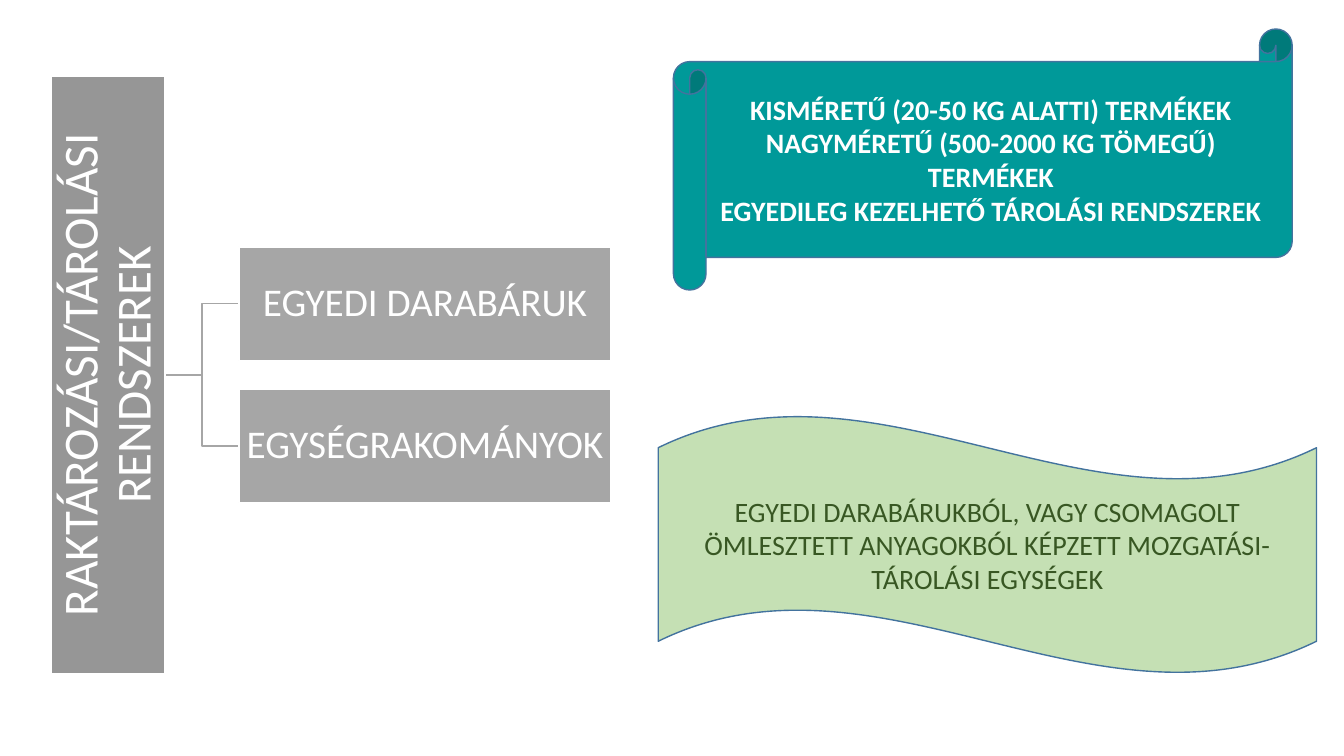
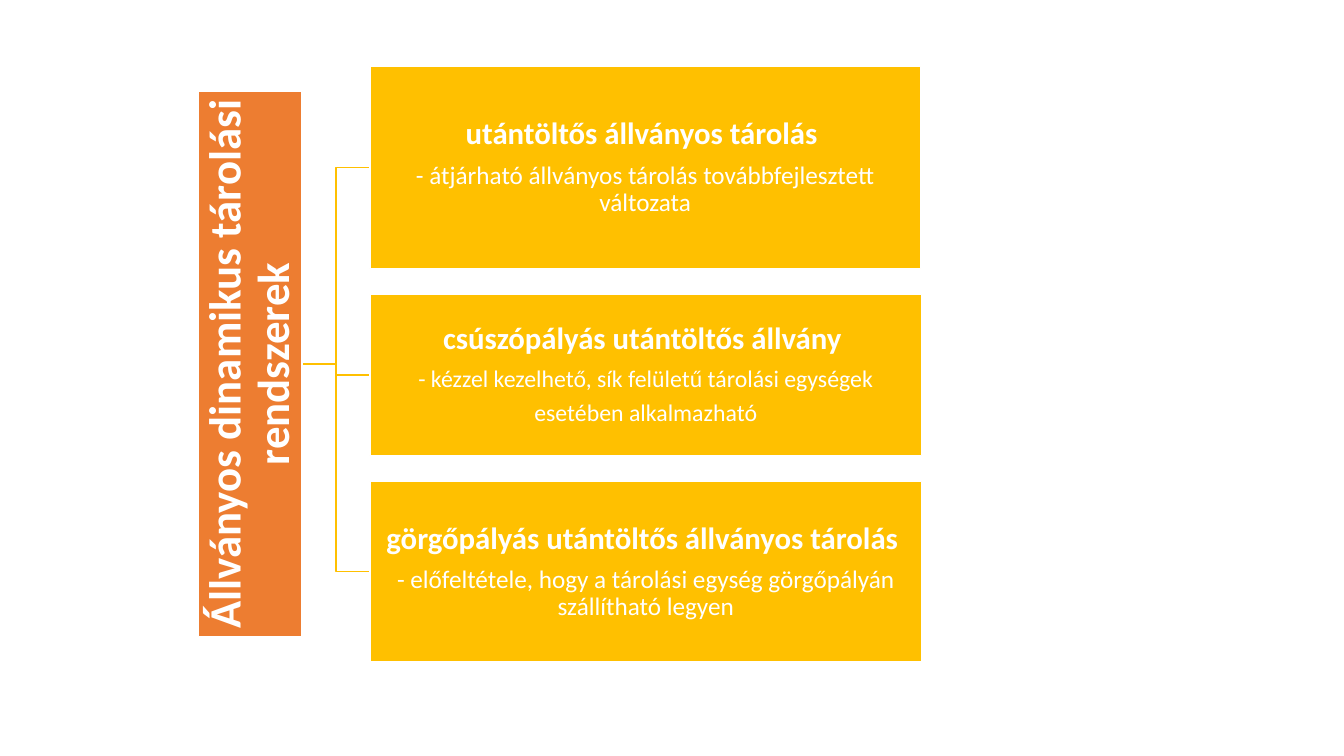
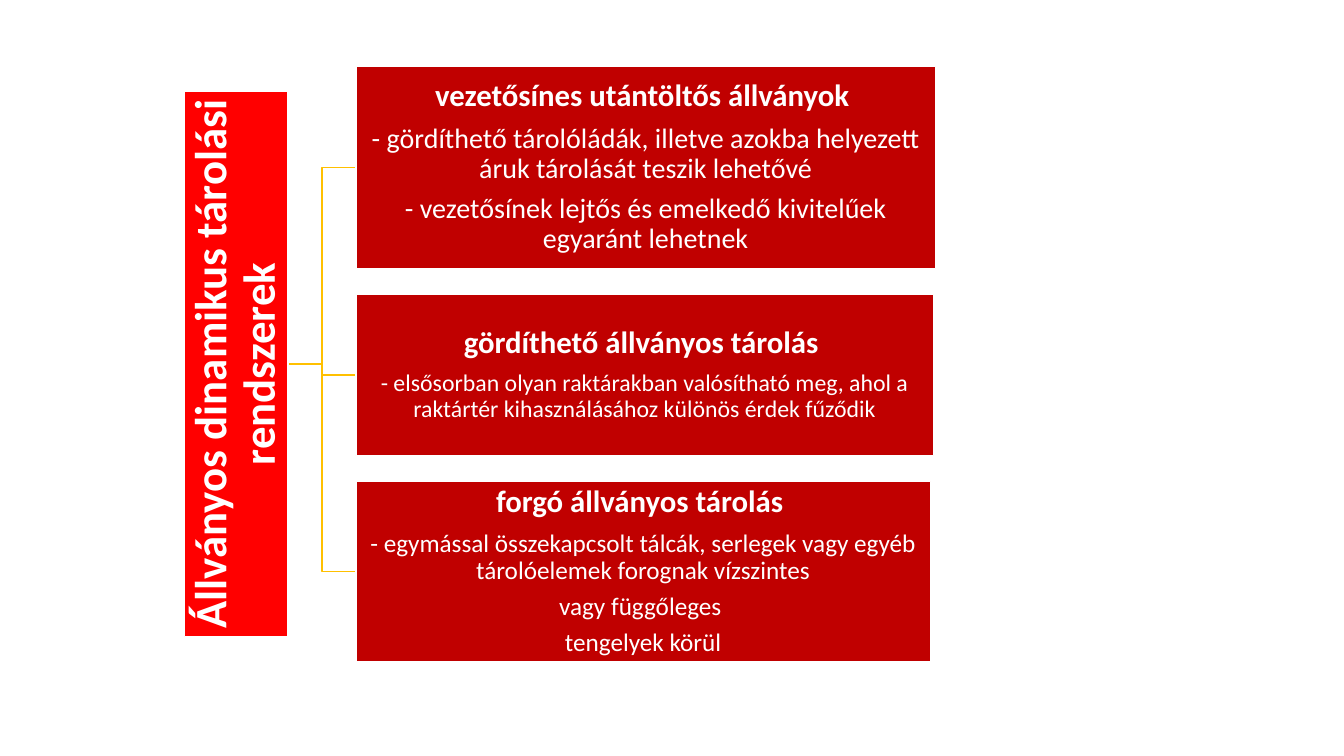
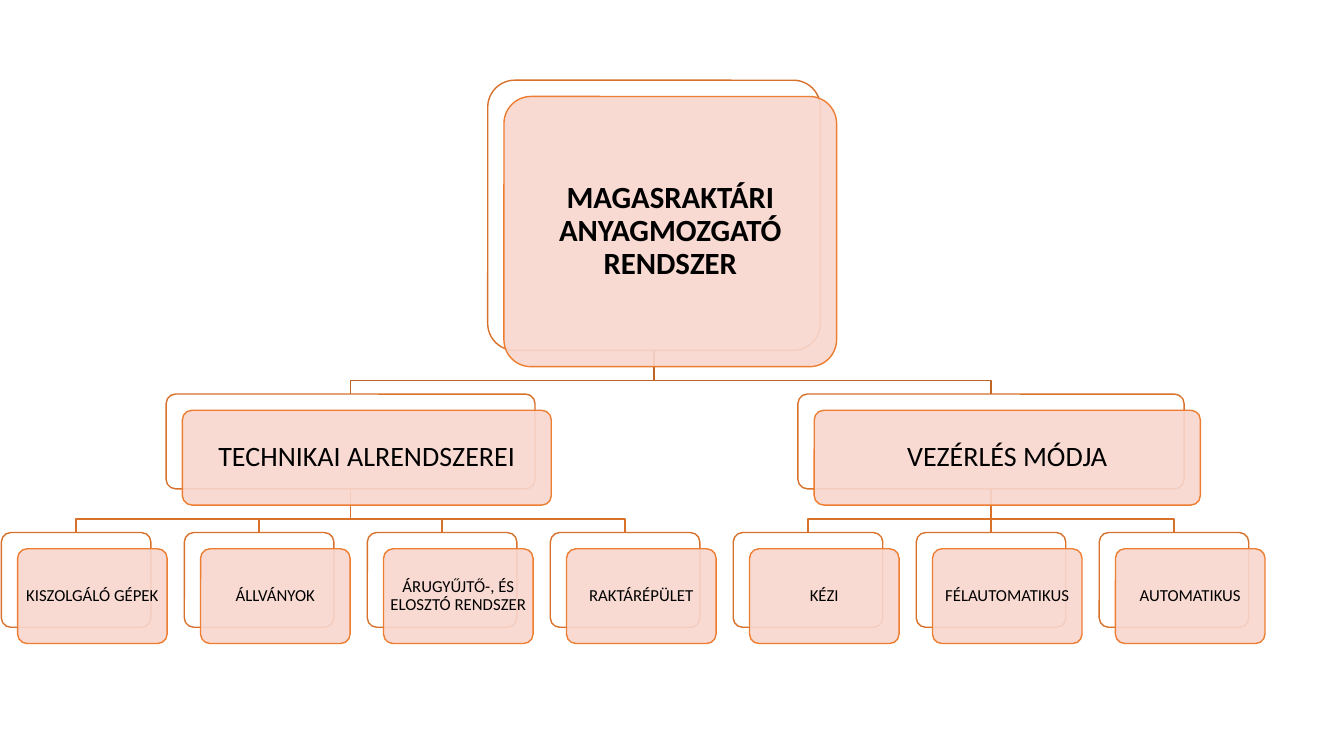
"""Build four slides of tree diagrams about warehouse storage systems."""
from lxml import etree
from pptx import Presentation
from pptx.dml.color import RGBColor
from pptx.enum.shapes import MSO_SHAPE
from pptx.enum.text import MSO_ANCHOR, MSO_AUTO_SIZE, PP_ALIGN
from pptx.oxml.ns import qn
from pptx.util import Pt

FONT = "Calibri"
TITLE_ONLY = 5
COLORS = {
    "white": "FFFFFF", "black": "000000", "gray": "A6A6A6", "dark gray": "969696",
    "orange": "ED7D31", "gold": "FFC000", "red": "FF0000", "dark red": "C00000",
    "teal": "009999", "light green": "C5E0B4", "dark green": "385723", "blue": "43739E",
    "peach": "F8D7CE", "rust": "D7712C", "dark rust": "BE6427",
}

RACK_TITLE = ("Állványos dinamikus tárolási rendszerek", 32, True)
BRACKETS = [
    {
        "title": ("RAKTÁROZÁSI/TÁROLÁSI RENDSZEREK", 35, False),
        "bar": (36.8, 54.2, 81, 427.2), "bar fill": "dark gray",
        "fill": "gray", "line": "gray",
        "left": 170.6, "top": 176.4, "gap": 20.3,
        "boxes": [
            (265.8, 81.2, [("EGYEDI DARABÁRUK", 28, False)]),
            (265.8, 81.2, [("EGYSÉGRAKOMÁNYOK", 28, False)]),
        ],
    },
    {
        "title": RACK_TITLE,
        "bar": (141.8, 65.2, 74, 389.5), "bar fill": "orange",
        "fill": "gold", "line": "gold",
        "left": 264.2, "top": 47.4, "gap": 18.4,
        "boxes": [
            (393.2, 144.6, [
                ("utántöltős állványos tárolás ", 22, True),
                ("- átjárható állványos tárolás továbbfejlesztett változata", 18, False)]),
            (394.2, 115, [
                ("csúszópályás utántöltős állvány ", 22, True),
                ("- kézzel kezelhető, sík felületű tárolási egységek", 17, False),
                ("esetében alkalmazható", 17, False)]),
            (394.2, 129, [
                ("görgőpályás utántöltős állványos tárolás ", 22, True),
                ("- előfeltétele, hogy a tárolási egység görgőpályán szállítható legyen",
                 18, False)]),
        ],
    },
    {
        "title": RACK_TITLE,
        "bar": (131.7, 65.2, 74, 389.5), "bar fill": "red",
        "fill": "dark red", "line": "gold",
        "left": 254.2, "top": 47.4, "gap": 18.4,
        "boxes": [
            (414, 144.6, [
                ("vezetősínes utántöltős állványok ", 22, True),
                ("- gördíthető tárolóládák, illetve azokba helyezett áruk tárolását "
                 "teszik lehetővé", 20, False),
                ("- vezetősínek lejtős és emelkedő kivitelűek egyaránt lehetnek", 20, False)]),
            (412.6, 115, [
                ("gördíthető állványos tárolás ", 22, True),
                ("- elsősorban olyan raktárakban valósítható meg, ahol a raktártér "
                 "kihasználásához különös érdek fűződik", 17, False)]),
            (410.4, 129, [
                ("forgó állványos tárolás ", 22, True),
                ("- egymással összekapcsolt tálcák, serlegek vagy egyéb tárolóelemek "
                 "forognak vízszintes", 18, False),
                ("vagy függőleges ", 18, False),
                ("tengelyek körül", 18, False)]),
        ],
    },
]

BANNERS = [
    (MSO_SHAPE.HORIZONTAL_SCROLL, (481, 20.7, 442, 186.5), "teal", "white", [
        ("KISMÉRETŰ (20-50 KG ALATTI) TERMÉKEK", 20, True),
        ("NAGYMÉRETŰ (500-2000 KG TÖMEGŰ) TERMÉKEK", 20, True),
        ("EGYEDILEG KEZELHETŐ TÁROLÁSI RENDSZEREK", 20, True)]),
    (MSO_SHAPE.WAVE, (470.2, 296.8, 470.2, 184.3), "light green", "dark green", [
        ("EGYEDI DARABÁRUKBÓL, VAGY CSOMAGOLT ÖMLESZTETT ANYAGOKBÓL KÉPZETT "
         "MOZGATÁSI-TÁROLÁSI EGYSÉGEK", 20, False)]),
]

ROOT = ("MAGASRAKTÁRI ANYAGMOZGATÓ RENDSZER", 22, True)
ROOT_BOX = (348.4, 57.3, 237.6, 193)
BRANCHES = [
    ("TECHNIKAI ALRENDSZEREI", 263.5,
     ["KISZOLGÁLÓ GÉPEK", "ÁLLVÁNYOK", "ÁRUGYŰJTŐ-, ÉS ELOSZTÓ RENDSZER", "RAKTÁRÉPÜLET"]),
    ("VEZÉRLÉS MÓDJA", 275.8, ["KÉZI", "FÉLAUTOMATIKUS", "AUTOMATIKUS"]),
]
BRANCH_TOP, LEAF_TOP, CARD_HEIGHT = 281.5, 380.4, 67.7
LEAF_LEFT, LEAF_WIDTH, LEAF_PITCH = 1, 106.8, 130.7
CARD_SHIFT = 11.6
BUS_RISE = 9.7


def color(name):
    return RGBColor.from_string(COLORS[name])


def outline(shape, line):
    shape.line.color.rgb = color(line)
    shape.line.width = Pt(1)


def paint(shape, fill, line):
    shape.fill.solid()
    shape.fill.fore_color.rgb = color(fill)
    outline(shape, line)


def place(shape, box):
    shape.left, shape.top, shape.width, shape.height = map(Pt, box)


def write(shape, lines, text_color, inset=None, line_spacing=0.9, space_ratio=0.35):
    frame = shape.text_frame
    frame.auto_size = MSO_AUTO_SIZE.NONE
    frame.word_wrap = True
    frame.vertical_anchor = MSO_ANCHOR.MIDDLE
    if inset is not None:
        frame.margin_left = frame.margin_right = Pt(inset)
        frame.margin_top = frame.margin_bottom = Pt(inset)
    for index, (text, size, bold) in enumerate(lines):
        paragraph = frame.add_paragraph() if index else frame.paragraphs[0]
        paragraph.text = text
        paragraph.alignment = PP_ALIGN.CENTER
        paragraph.line_spacing = line_spacing
        paragraph.space_after = Pt(round(size * space_ratio, 2))
        paragraph.font.name = FONT
        paragraph.font.size = Pt(size)
        paragraph.font.bold = bold
        paragraph.font.color.rgb = color(text_color)


def add_shape(slide, kind, box, fill, line):
    shape = slide.shapes.add_shape(kind, *map(Pt, box))
    shape.shadow.inherit = False
    paint(shape, fill, line)
    return shape


def add_elbow(slide, points, line):
    start, *others = [(Pt(x), Pt(y)) for x, y in points]
    builder = slide.shapes.build_freeform(*start)
    builder.add_line_segments(others, close=False)
    elbow = builder.convert_to_shape()
    elbow.shadow.inherit = False
    elbow.fill.background()
    outline(elbow, line)


def add_bracket(slide, bracket):
    left, top, width, height = bracket["bar"]
    center_x, center_y = left + width / 2, top + height / 2
    bar_right, box_left = left + width, bracket["left"]
    spine_x = (bar_right + box_left) / 2

    box_top = bracket["top"]
    for box_width, box_height, lines in bracket["boxes"]:
        middle = box_top + box_height / 2
        add_elbow(slide, [(bar_right, center_y), (spine_x, center_y),
                          (spine_x, middle), (box_left, middle)], bracket["line"])
        box = add_shape(slide, MSO_SHAPE.RECTANGLE,
                        (box_left, box_top, box_width, box_height),
                        bracket["fill"], "white")
        write(box, lines, "white", inset=1.4)
        box_top += box_height + bracket["gap"]

    title = slide.shapes.title
    place(title, (center_x - height / 2, center_y - width / 2, height, width))
    title.rotation = 270
    paint(title, bracket["bar fill"], "white")
    write(title, [bracket["title"]], "white", inset=1.4)
    title.element.getparent().append(title.element)


def add_bus(slide, parent_x, parent_bottom, child_xs, child_top, line):
    bus_y = child_top - BUS_RISE
    for child_x in child_xs:
        add_elbow(slide, [(parent_x, parent_bottom), (parent_x, bus_y),
                          (child_x, bus_y), (child_x, child_top)], line)


def add_card(slide, box):
    left, top, width, height = box
    front_box = (left + CARD_SHIFT, top + CARD_SHIFT, width, height)
    back = add_shape(slide, MSO_SHAPE.ROUNDED_RECTANGLE, box, "white", "rust")
    front = add_shape(slide, MSO_SHAPE.ROUNDED_RECTANGLE, front_box, "peach", "orange")
    for card in (back, front):
        card.adjustments[0] = 0.1
    fill_color = front._element.spPr.find(qn("a:solidFill"))[0]
    etree.SubElement(fill_color, qn("a:alpha"), val="90000")
    return front


def add_hierarchy(slide):
    cards = []
    branch_xs = []
    leaf_left = LEAF_LEFT
    for name, width, leaves in BRANCHES:
        leaf_xs = []
        for leaf in leaves:
            cards.append(((leaf_left, LEAF_TOP, LEAF_WIDTH, CARD_HEIGHT), leaf, 12, 1.6))
            leaf_xs.append(leaf_left + LEAF_WIDTH / 2)
            leaf_left += LEAF_PITCH
        branch_x = (leaf_xs[0] + leaf_xs[-1]) / 2
        branch_xs.append(branch_x)
        cards.append(((branch_x - width / 2, BRANCH_TOP, width, CARD_HEIGHT), name, 20, 4))
        add_bus(slide, branch_x, BRANCH_TOP + CARD_HEIGHT, leaf_xs, LEAF_TOP, "rust")

    left, top, width, height = ROOT_BOX
    add_bus(slide, left + width / 2, top + height, branch_xs, BRANCH_TOP, "dark rust")
    for box, text, size, inset in cards:
        write(add_card(slide, box), [(text, size, False)], "black", inset)

    add_card(slide, ROOT_BOX)
    title = slide.shapes.title
    place(title, (left + CARD_SHIFT, top + CARD_SHIFT, width, height))
    write(title, [ROOT], "black", inset=6.5)
    title.element.getparent().append(title.element)


def main():
    presentation = Presentation()
    presentation.slide_width, presentation.slide_height = Pt(960), Pt(540)
    layout = presentation.slide_layouts[TITLE_ONLY]

    for bracket in BRACKETS:
        add_bracket(presentation.slides.add_slide(layout), bracket)
    for kind, box, fill, text_color, lines in BANNERS:
        banner = add_shape(presentation.slides[0], kind, box, fill, "blue")
        write(banner, lines, text_color, line_spacing=1.0, space_ratio=0)
    add_hierarchy(presentation.slides.add_slide(layout))

    presentation.save("out.pptx")


if __name__ == "__main__":
    main()
